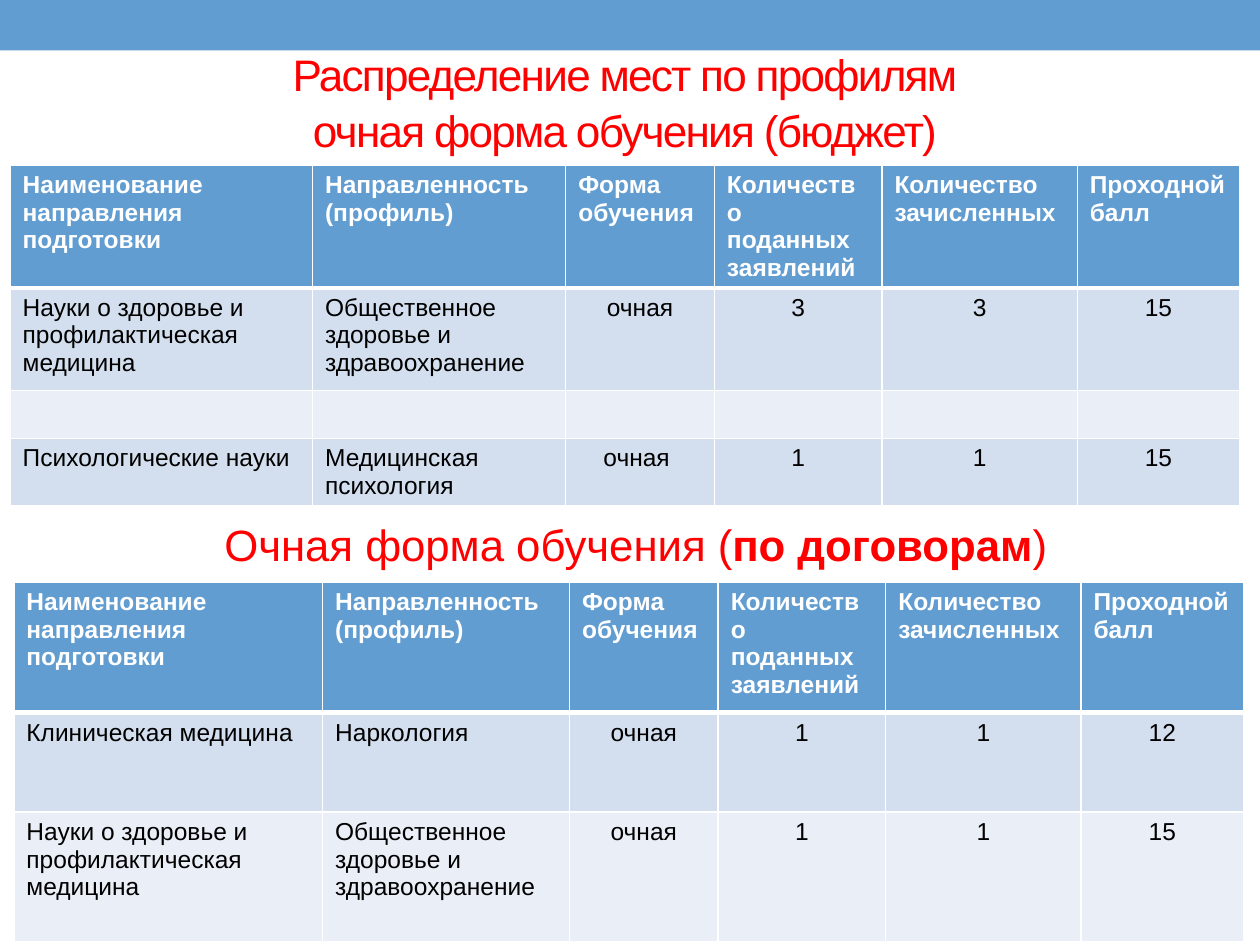
from lxml.etree import SubElement
from pptx import Presentation
from pptx.dml.color import RGBColor
from pptx.enum.shapes import MSO_SHAPE as Preset
from pptx.enum.text import MSO_ANCHOR as Anchor, MSO_AUTO_SIZE as AutoSize, PP_ALIGN as Align
from pptx.oxml.ns import qn
from pptx.util import Inches, Pt

FONT = "Arial"
BLUE = RGBColor(0x62, 0x9D, 0xD1)
RED = RGBColor(0xFF, 0x00, 0x00)
BLACK = RGBColor(0x00, 0x00, 0x00)
WHITE = RGBColor(0xFF, 0xFF, 0xFF)
BANDS = [RGBColor(0xD3, 0xDF, 0xEE), RGBColor(0xEA, 0xEF, 0xF7)]

WIDTH, HEIGHT = Inches(10), Inches(7.5)
HEADINGS = ["Наименование направления подготовки", "Направленность (профиль)",
            "Форма обучения", "Количество поданных заявлений",
            "Количество зачисленных", "Проходной балл"]
HEALTH = ["Науки о здоровье и профилактическая медицина",
          "Общественное здоровье и здравоохранение", "очная"]
BUDGET_ROWS = [
    HEALTH + ["3", "3", "15"],
    [""] * len(HEADINGS),
    ["Психологические науки", "Медицинская психология", "очная ", "1", "1", "15"],
]
CONTRACT_ROWS = [
    ["Клиническая медицина", "Наркология", "очная", "1", "1", "12"],
    HEALTH + ["1", "1", "15"],
]


def area(left, top, width, height):
    """Turn percentages of the slide's size into a box."""
    return (round(WIDTH * left / 100), round(HEIGHT * top / 100),
            round(WIDTH * width / 100), round(HEIGHT * height / 100))


def add_span(para, text, size, color, bold=False):
    span = para.add_run()
    span.text = text
    span.font.name = FONT
    span.font.size = Pt(size)
    span.font.bold = bold
    span.font.color.rgb = color
    return span


def add_band(page, box):
    band = page.shapes.add_shape(Preset.RECTANGLE, *box)
    band.shadow.inherit = False
    band.fill.solid()
    band.fill.fore_color.rgb = BLUE
    band.line.fill.background()
    page.shapes._spTree.insert(2, band._element)  # behind the title


def fill_title(page, box, lines):
    title = page.shapes.title
    title.left, title.top, title.width, title.height = box
    frame = title.text_frame
    frame.auto_size = AutoSize.NONE
    frame.vertical_anchor = Anchor.MIDDLE
    para = frame.paragraphs[0]
    para.alignment = Align.CENTER
    para.line_spacing = 1.05
    for index, line in enumerate(lines):
        if index:
            para.add_line_break()
        span = add_span(para, line, 25.2, RED)
        span.font._element.set("spc", "-100")


def add_subtitle(page, box, parts):
    frame = page.shapes.add_textbox(*box).text_frame
    frame.word_wrap = True
    para = frame.paragraphs[0]
    para.alignment = Align.CENTER
    for text, bold in parts:
        add_span(para, text, 25, RED, bold)


def set_borders(cell, top, bottom):
    """Draw white cell borders; top and bottom are widths in points."""
    properties = cell._tc.get_or_add_tcPr()
    for side, width in (("L", 1), ("R", 1), ("T", top), ("B", bottom)):
        line = SubElement(properties, qn(f"a:ln{side}"), w=str(Pt(width)))
        fill = SubElement(line, qn("a:solidFill"))
        SubElement(fill, qn("a:srgbClr"), val=str(WHITE))


def add_places_table(page, box, column_shares, row_shares, body):
    left, top, width, height = box
    rows = [HEADINGS] + body
    table = page.shapes.add_table(len(rows), len(HEADINGS), *box).table
    for column, share in zip(table.columns, column_shares):
        column.width = round(width * share / sum(column_shares))
    for row, share in zip(table.rows, row_shares):
        row.height = round(height * share / sum(row_shares))
    for r, texts in enumerate(rows):
        header = r == 0
        for c, text in enumerate(texts):
            cell = table.cell(r, c)
            set_borders(cell, 3 if r == 1 else 1, 3 if header else 1)
            cell.fill.solid()
            cell.fill.fore_color.rgb = BLUE if header else BANDS[(r - 1) % 2]
            para = cell.text_frame.paragraphs[0]
            para.alignment = Align.LEFT if header or c < 2 else Align.CENTER
            add_span(para, text, 14, WHITE if header else BLACK, header)


def main():
    deck = Presentation()
    deck.slide_width, deck.slide_height = WIDTH, HEIGHT
    page = deck.slides.add_slide(deck.slide_layouts[5])
    add_band(page, area(0, 0, 100, 5.33))
    fill_title(page, area(0.4, 4.8, 98.4, 11.73),
               ["Распределение мест по профилям", "очная форма обучения (бюджет)"])
    add_places_table(page, area(0.8, 17.47, 97.6, 35.87),
                     [2.4, 2.01, 1.18, 1.33, 1.55, 1.29],
                     [0.96, 0.81, 0.38, 0.53], BUDGET_ROWS)
    add_subtitle(page, area(2, 54.13, 96.9, 10.93),
                 [("Очная форма обучения (", False), ("по договорам", True), (")", False)])
    add_places_table(page, area(1.1, 61.6, 97.6, 37.87),
                     [2.45, 1.96, 1.18, 1.33, 1.55, 1.29],
                     [1.02, 0.79, 1.03], CONTRACT_ROWS)
    deck.save("out.pptx")


if __name__ == "__main__":
    main()
